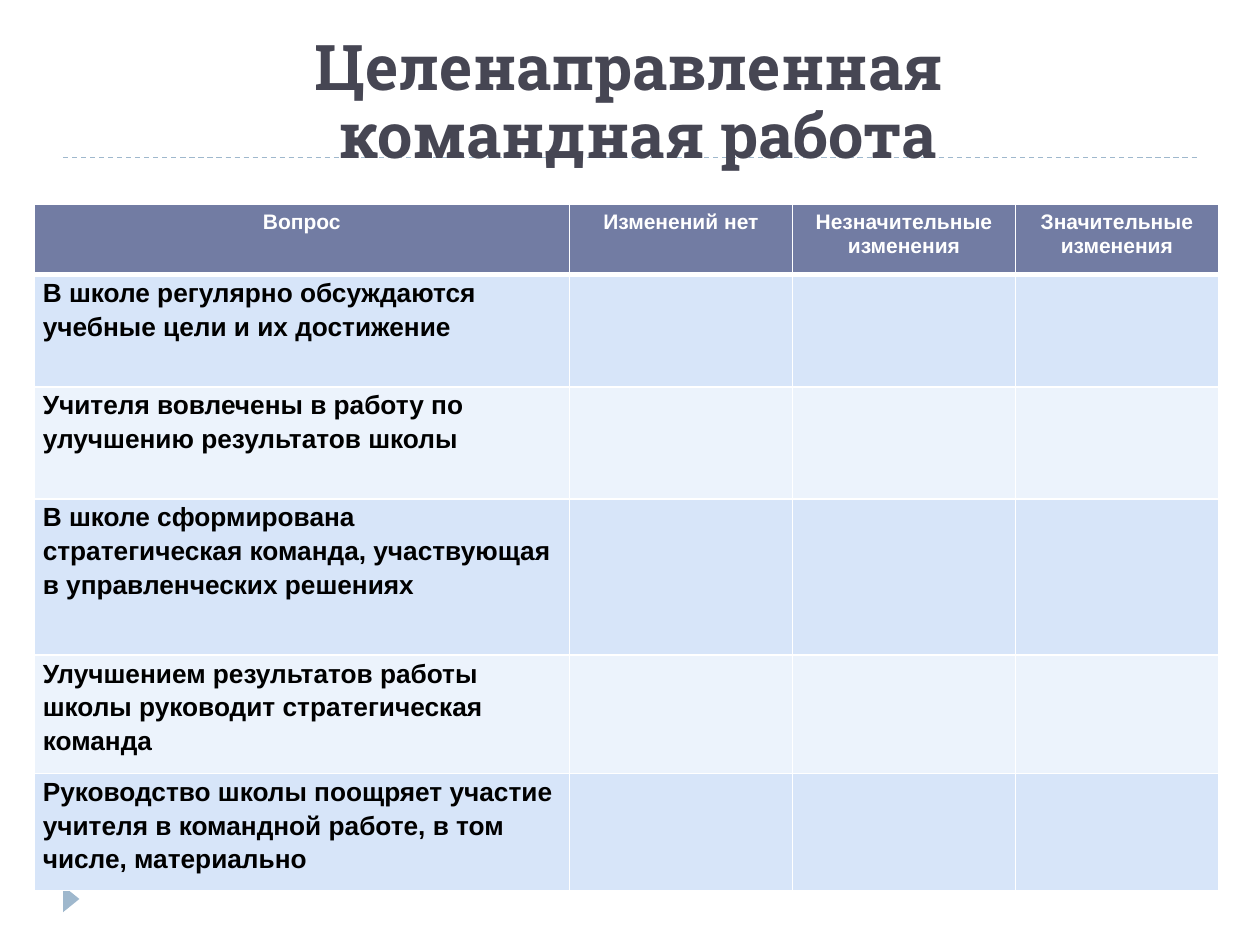
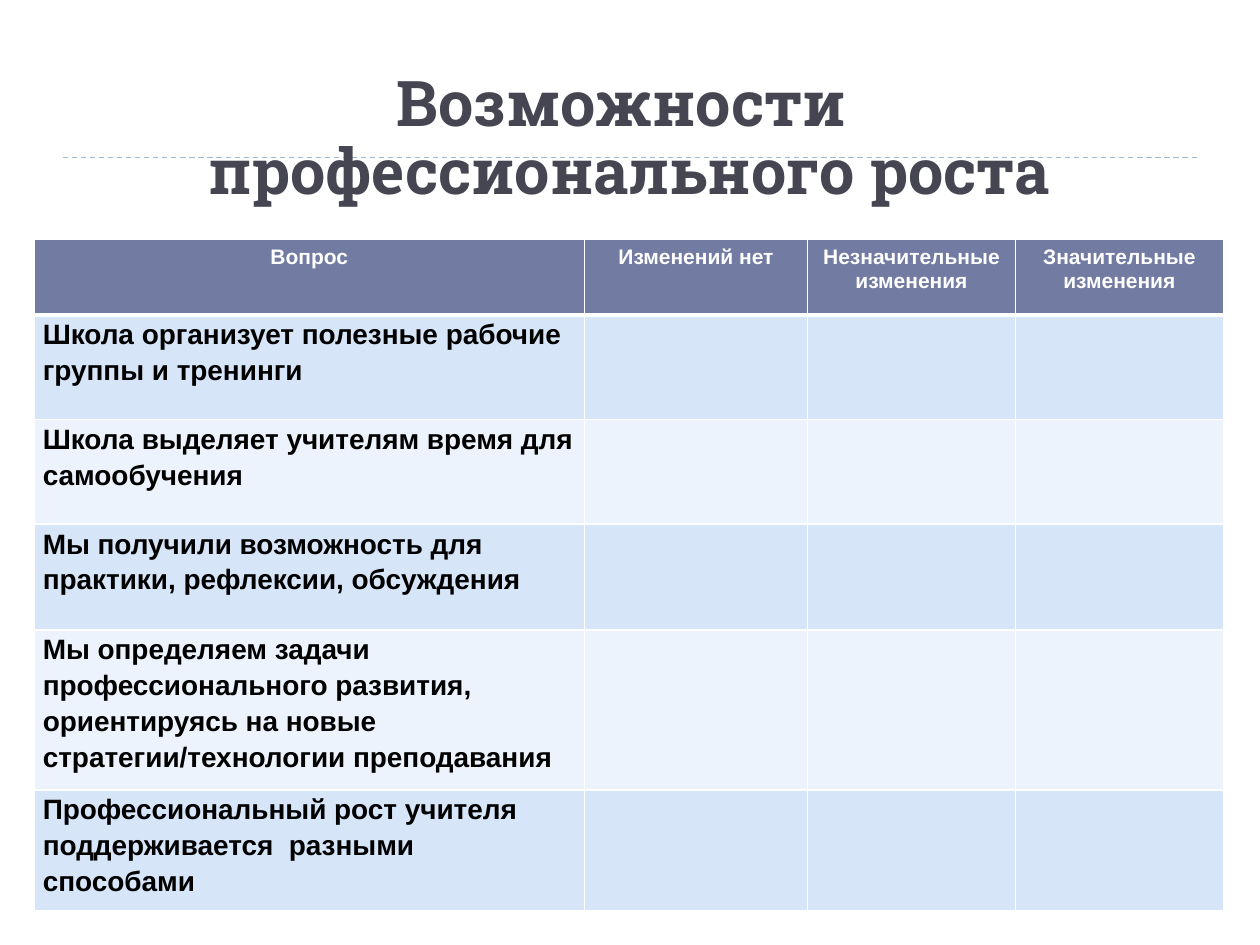
from copy import deepcopy

from lxml.etree import SubElement
from pptx import Presentation
from pptx.dml.color import RGBColor
from pptx.enum.dml import MSO_LINE
from pptx.enum.shapes import MSO_CONNECTOR, MSO_SHAPE
from pptx.enum.text import MSO_ANCHOR, MSO_AUTO_SIZE, PP_ALIGN
from pptx.oxml.ns import qn
from pptx.util import Inches, Pt

# Content
HEADERS = ["Вопрос", "Изменений нет", "Незначительные изменения", "Значительные изменения"]
SURVEYS = [
    {
        "title": "Целенаправленная\n командная работа",
        "title_box": (0.31, 0.28, 9.37, 1.14),
        "table_top": 1.62,
        "columns": [4.25, 1.77, 1.77, 1.61],
        "rows": [0.56, 0.89, 0.89, 1.24, 0.94, 0.93],
        "question_size": 15,
        "questions": [
            "В школе регулярно обсуждаются учебные цели и их достижение",
            "Учителя вовлечены в работу по улучшению результатов школы",
            "В школе сформирована стратегическая команда, участвующая в управленческих решениях",
            "Улучшением результатов работы школы руководит стратегическая команда",
            "Руководство школы поощряет участие учителя в командной работе, в том числе, материально",
        ],
    },
    {
        "title": "Возможности \nпрофессионального роста",
        "title_box": (0.31, 0.32, 9.37, 1.38),
        "table_top": 1.9,
        "columns": [4.37, 1.77, 1.65, 1.65],
        "rows": [0.6, 0.83, 0.83, 0.84, 1.27, 0.96],
        "question_size": 16,
        "questions": [
            "Школа организует полезные рабочие группы и тренинги",
            "Школа выделяет учителям время для самообучения",
            "Мы получили возможность для практики, рефлексии, обсуждения",
            "Мы определяем задачи профессионального развития, ориентируясь на новые "
            "стратегии/технологии преподавания",
            "Профессиональный рост учителя поддерживается  разными  способами",
        ],
    },
]

# Shared style
TITLE_FONT, TABLE_FONT = "Roboto Slab", "Arial"
TITLE_COLOR, ACCENT, HEADER_FILL = "464653", "9FB8CD", "727CA3"
WHITE, BLACK = "FFFFFF", "000000"
BAND_FILLS = ["D7E5F9", "ECF3FC"]
TABLE_LEFT = 0.27
HEADER_MARGINS, QUESTION_MARGINS = (0.1, 0.05), (0.07, 0)


def color(value):
    return RGBColor.from_string(value)


def write(text_frame, text, font=TABLE_FONT, size=12, fill=BLACK, align=PP_ALIGN.LEFT,
          line_spacing=1.0, space_after=0):
    paragraph = text_frame.paragraphs[0]
    paragraph.text = text
    paragraph.alignment = align
    paragraph.line_spacing = line_spacing
    paragraph.space_after = Pt(space_after)
    for run in paragraph.runs:
        run.font.name = font
        run.font.size = Pt(size)
        run.font.bold = True
        run.font.color.rgb = color(fill)
    # Line breaks take the format of the text around them
    for line_break in paragraph._p.findall(qn("a:br")):
        line_break.append(deepcopy(paragraph.runs[0].font._element))


def add_layout_marks(slide):
    """Draw the dashed rules and the corner marker, then move them to the layout."""
    marks = []
    for y in (6.95, 1.25):
        rule = slide.shapes.add_connector(
            MSO_CONNECTOR.STRAIGHT, Inches(0.5), Inches(y), Inches(9.5), Inches(y))
        rule.line.color.rgb = color(ACCENT)
        rule.line.width = Pt(0.75)
        rule.line.dash_style = MSO_LINE.DASH
        SubElement(rule.element.spPr, qn("a:effectLst"))
        marks.append(rule)
    marker = slide.shapes.add_shape(
        MSO_SHAPE.ISOSCELES_TRIANGLE, Inches(0.46), Inches(7.07), Inches(0.21), Inches(0.13))
    marker.rotation = 90
    marker.shadow.inherit = False
    marker.fill.solid()
    marker.fill.fore_color.rgb = color(ACCENT)
    marker.line.fill.background()
    marks.append(marker)
    for mark in marks:
        slide.slide_layout.element.cSld.spTree.append(mark.element)


def add_title(slide, text, box):
    title = slide.shapes.title
    title.left, title.top, title.width, title.height = map(Inches, box)
    frame = title.text_frame
    frame.word_wrap = True
    frame.auto_size = MSO_AUTO_SIZE.NONE
    frame.vertical_anchor = MSO_ANCHOR.BOTTOM
    write(frame, text, font=TITLE_FONT, size=36, fill=TITLE_COLOR,
          align=PP_ALIGN.CENTER, line_spacing=0.9)


def style_cell(cell, fill, margins, top=1, bottom=1):
    cell.margin_left = cell.margin_right = Inches(margins[0])
    cell.margin_top = cell.margin_bottom = Inches(margins[1])
    properties = cell._tc.get_or_add_tcPr()
    for side, width in (("L", 1), ("R", 1), ("T", top), ("B", bottom)):
        border = SubElement(properties, qn(f"a:ln{side}"), w=str(Pt(width)))
        border_fill = SubElement(border, qn("a:solidFill"))
        SubElement(border_fill, qn("a:srgbClr"), val=WHITE)
    cell.fill.solid()
    cell.fill.fore_color.rgb = color(fill)


def add_survey_table(slide, survey):
    columns, rows = survey["columns"], survey["rows"]
    table = slide.shapes.add_table(
        len(rows), len(columns), Inches(TABLE_LEFT), Inches(survey["table_top"]),
        Inches(sum(columns)), Inches(sum(rows))).table
    for column, width in zip(table.columns, columns):
        column.width = Inches(width)
    for row, height in zip(table.rows, rows):
        row.height = Inches(height)

    # Header row
    for cell, header in zip(table.rows[0].cells, HEADERS):
        style_cell(cell, HEADER_FILL, HEADER_MARGINS, bottom=3)
        write(cell.text_frame, header, fill=WHITE, align=PP_ALIGN.CENTER)

    # Questions with empty answer cells
    for index, question in enumerate(survey["questions"]):
        cells = list(table.rows[index + 1].cells)
        for cell in cells:
            style_cell(cell, BAND_FILLS[index % 2], QUESTION_MARGINS, top=3 if index == 0 else 1)
        write(cells[0].text_frame, question, size=survey["question_size"],
              line_spacing=1.15, space_after=10)


def main():
    presentation = Presentation()
    presentation.slide_width, presentation.slide_height = Inches(10), Inches(7.5)
    title_only = presentation.slide_layouts[5]
    for index, survey in enumerate(SURVEYS):
        slide = presentation.slides.add_slide(title_only)
        if index == 0:
            add_layout_marks(slide)
        add_title(slide, survey["title"], survey["title_box"])
        add_survey_table(slide, survey)
    presentation.save("out.pptx")


if __name__ == "__main__":
    main()
